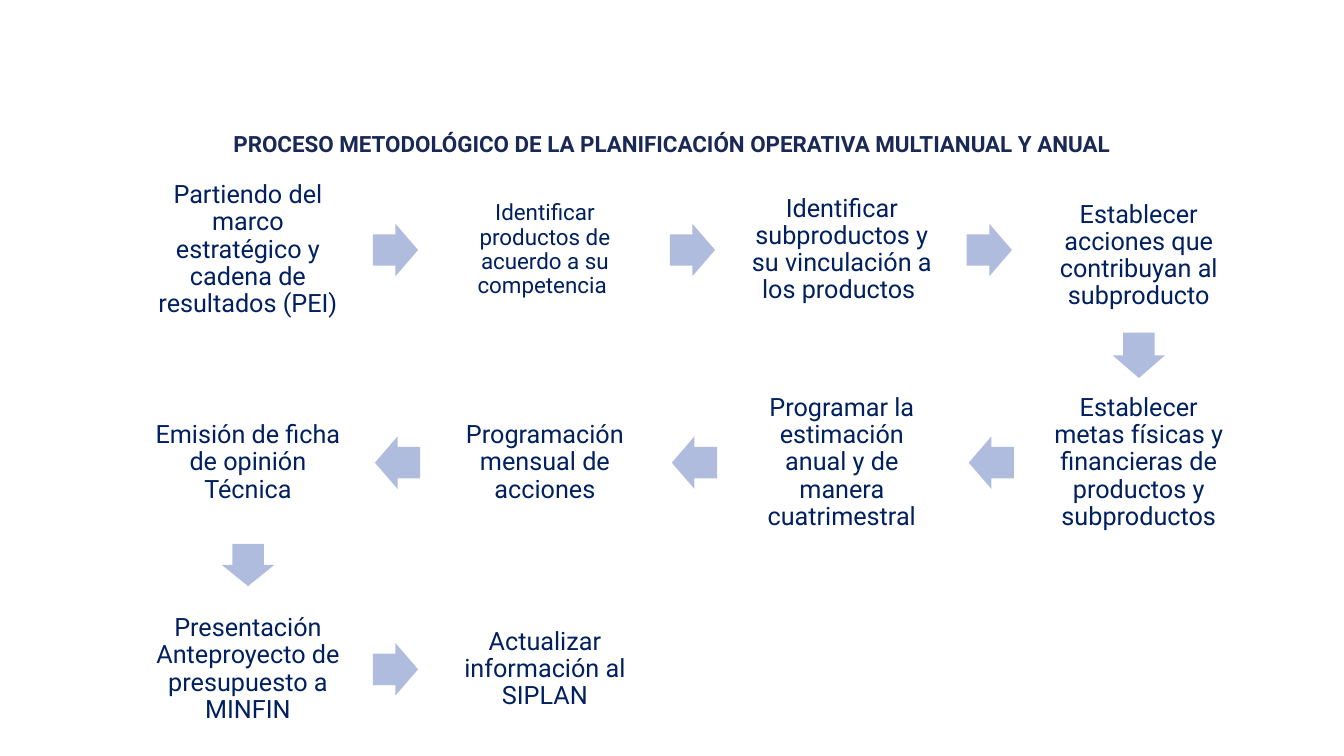
from dataclasses import dataclass

from pptx import Presentation
from pptx.dml.color import RGBColor
from pptx.enum.shapes import MSO_SHAPE as Preset
from pptx.enum.text import MSO_ANCHOR as Anchor, PP_ALIGN as Align
from pptx.slide import Slide
from pptx.util import Inches, Pt

WHITE = RGBColor(0xFF, 0xFF, 0xFF)
NAVY = RGBColor(0x00, 0x20, 0x60)
TITLE_BLUE = RGBColor(0x19, 0x28, 0x54)
ARROW_BLUE = RGBColor(0xB0, 0xBC, 0xDE)
FONT = "Roboto"

LEFT, COLUMN_PITCH = 1.41, 2.945
ROW_TOPS = (1.85, 3.96, 6.01)
CARD_WIDTH, CARD_HEIGHT, INSET = 2.1, 1.26, 0.07
ARROW_WIDTH, ARROW_SHARE, ARROW_SETBACK = 0.52, 0.53, 0.01


@dataclass(frozen=True)
class Step:
    column: int
    row: int
    text: str
    size: int = 18
    extra_top: float = 0

    @property
    def left(self) -> float:
        return LEFT + COLUMN_PITCH * self.column

    @property
    def top(self) -> float:
        return ROW_TOPS[self.row]


STEPS = (
    Step(0, 0, "Partiendo del marco estratégico y cadena de resultados (PEI)"),
    Step(1, 0, "Identificar productos de acuerdo a su competencia ", size=16),
    Step(2, 0, "Identificar subproductos y su vinculación a los productos "),
    Step(3, 0, "Establecer acciones que contribuyan al subproducto", extra_top=0.12),
    Step(3, 1, "Establecer metas físicas y financieras de productos y subproductos"),
    Step(2, 1, "Programar la estimación anual y de manera cuatrimestral"),
    Step(1, 1, "Programación mensual de acciones"),
    Step(0, 1, "Emisión de ficha de opinión Técnica"),
    Step(0, 2, "Presentación Anteproyecto de presupuesto a MINFIN"),
    Step(1, 2, "Actualizar información al SIPLAN"),
)


def add_title(slide: Slide, text: str) -> None:
    title = slide.shapes.title
    title.left, title.top = Inches(1.72), Inches(1.24)
    title.width, title.height = Inches(9.89), Inches(0.37)
    title.text_frame.vertical_anchor = Anchor.MIDDLE
    paragraph = title.text_frame.paragraphs[0]
    paragraph.alignment = Align.CENTER
    run = paragraph.add_run()
    run.text = text
    run.font.name, run.font.size, run.font.bold = FONT, Pt(16), True
    run.font.color.rgb = TITLE_BLUE


def add_card(slide: Slide, step: Step) -> None:
    card = slide.shapes.add_shape(
        Preset.ROUNDED_RECTANGLE, Inches(step.left), Inches(step.top),
        Inches(CARD_WIDTH), Inches(CARD_HEIGHT))
    card.adjustments[0] = 0.1
    card.shadow.inherit = False
    card.fill.solid()
    card.fill.fore_color.rgb = WHITE
    card.line.fill.background()
    frame = card.text_frame
    frame.word_wrap = True
    frame.vertical_anchor = Anchor.MIDDLE
    frame.margin_left = frame.margin_right = frame.margin_bottom = Inches(INSET)
    frame.margin_top = Inches(INSET + step.extra_top)
    paragraph = frame.paragraphs[0]
    paragraph.alignment = Align.CENTER
    paragraph.line_spacing = 0.9
    run = paragraph.add_run()
    run.text = step.text
    run.font.name, run.font.size = FONT, Pt(step.size)
    run.font.color.rgb = NAVY


def add_arrow(slide: Slide, start: Step, end: Step) -> None:
    across = end.column - start.column
    down = end.row - start.row
    gap = COLUMN_PITCH - CARD_WIDTH if across else end.top - start.top - CARD_HEIGHT
    length = gap * ARROW_SHARE
    center_x = (start.left + end.left + CARD_WIDTH) / 2 - across * ARROW_SETBACK
    center_y = (start.top + end.top + CARD_HEIGHT) / 2 - down * ARROW_SETBACK
    arrow = slide.shapes.add_shape(
        Preset.RIGHT_ARROW, Inches(center_x - length / 2),
        Inches(center_y - ARROW_WIDTH / 2), Inches(length), Inches(ARROW_WIDTH))
    arrow.adjustments[0], arrow.adjustments[1] = 0.6, 0.5
    arrow.rotation = 90 if down else 180 if across < 0 else 0
    arrow.shadow.inherit = False
    arrow.fill.solid()
    arrow.fill.fore_color.rgb = ARROW_BLUE
    arrow.line.fill.background()


def main() -> None:
    presentation = Presentation()
    presentation.slide_width = Inches(13.33)
    presentation.slide_height = Inches(7.5)
    slide = presentation.slides.add_slide(presentation.slide_layouts[5])
    add_title(slide, "PROCESO METODOLÓGICO DE LA PLANIFICACIÓN OPERATIVA MULTIANUAL Y ANUAL")
    for step in STEPS:
        add_card(slide, step)
    for start, end in zip(STEPS, STEPS[1:]):
        add_arrow(slide, start, end)
    presentation.save("out.pptx")


if __name__ == "__main__":
    main()
